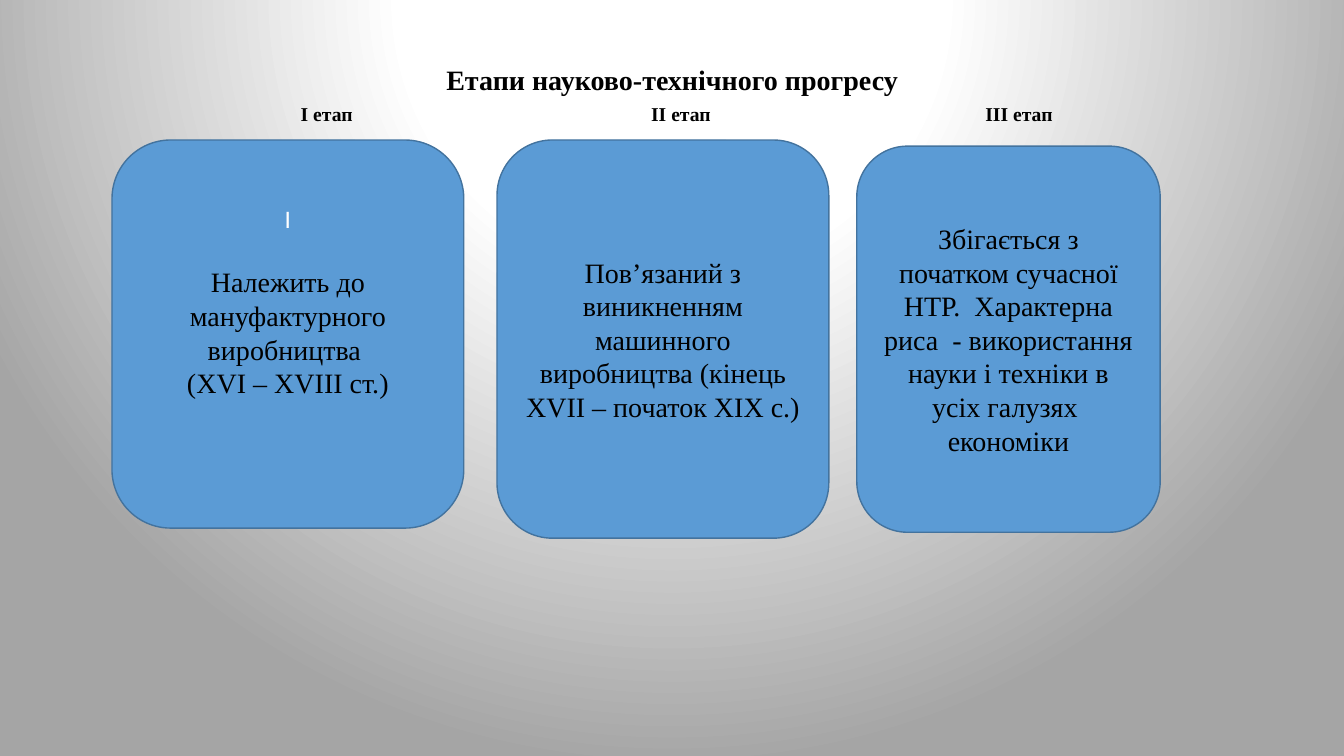
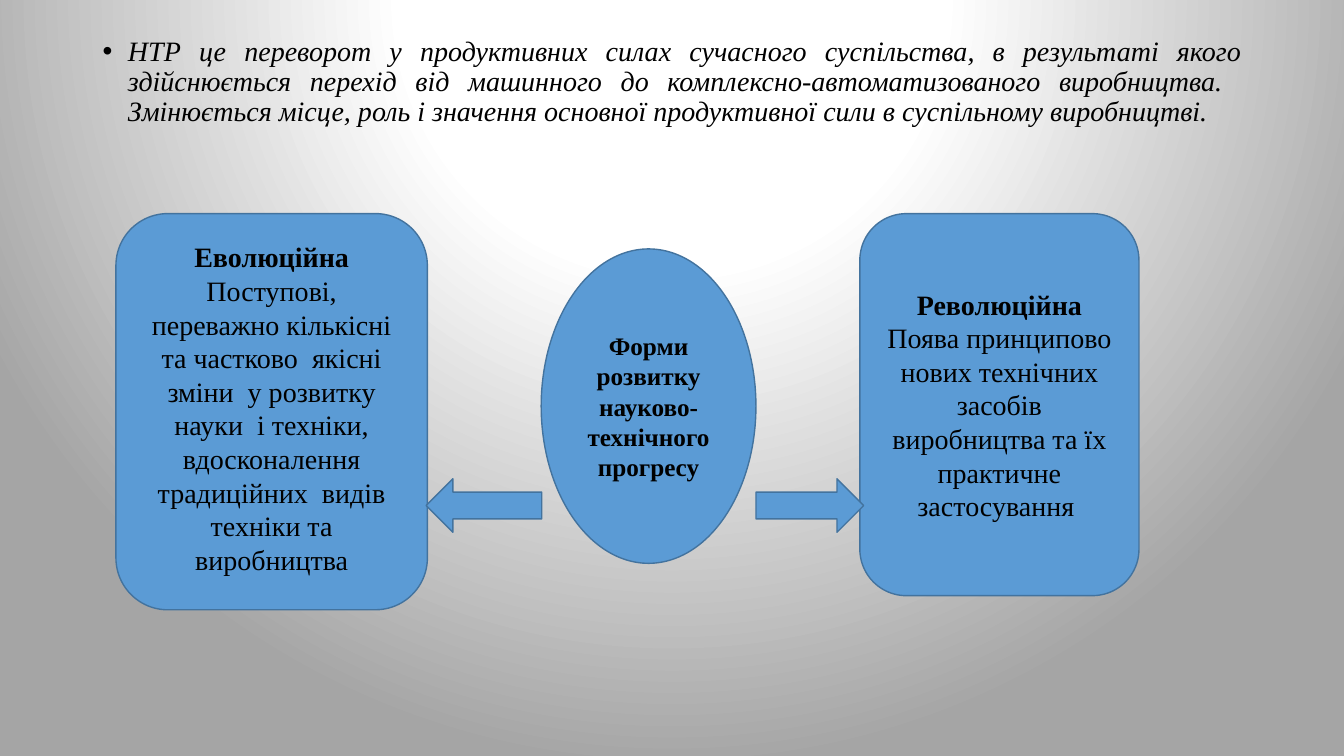
from dataclasses import dataclass

from lxml import etree
from pptx import Presentation
from pptx.dml.color import RGBColor
from pptx.enum import shapes, text
from pptx.oxml import parse_xml
from pptx.oxml.ns import nsdecls, qn
from pptx.util import Pt

BLACK = RGBColor(0x00, 0x00, 0x00)
WHITE = RGBColor(0xFF, 0xFF, 0xFF)
GREY = RGBColor(0xA5, 0xA5, 0xA5)
BLUE = RGBColor(0x5B, 0x9B, 0xD5)
OUTLINE = RGBColor(0x43, 0x73, 0x9E)
FONT = "Times New Roman"
ROUND = shapes.MSO_SHAPE.ROUNDED_RECTANGLE
MARGIN, CONTENT_W = 66.2, 828


@dataclass(frozen=True)
class Line:
    text: str
    size: float = 20
    bold: bool = False
    italic: bool = False
    font: str = FONT
    color: RGBColor = BLACK
    before: float = 0


@dataclass(frozen=True)
class Block:
    kind: shapes.MSO_SHAPE
    x: float
    y: float
    w: float
    h: float
    lines: tuple[Line, ...] = ()
    bottom: float = 3.6  # lower text inset


def write(tf, lines: tuple[Line, ...], align=text.PP_ALIGN.CENTER) -> None:
    """Fill a text frame, one paragraph per line."""
    tf.text = "\n".join(line.text for line in lines)
    tf.word_wrap = True
    tf.auto_size = text.MSO_AUTO_SIZE.NONE
    for p, line in zip(tf.paragraphs, lines):
        p.alignment = align
        p.space_before = Pt(line.before)
        for r in p.runs:
            f = r.font
            f.name, f.size = line.font, Pt(line.size)
            f.bold, f.italic = line.bold, line.italic
            f.color.rgb = line.color


def place(sp, x: float, y: float, w: float, h: float) -> None:
    sp.left, sp.top, sp.width, sp.height = Pt(x), Pt(y), Pt(w), Pt(h)


def draw(s, block: Block) -> None:
    sp = s.shapes.add_shape(block.kind, Pt(block.x), Pt(block.y), Pt(block.w), Pt(block.h))
    sp.shadow.inherit = False
    sp.fill.solid()
    sp.fill.fore_color.rgb = BLUE
    sp.line.color.rgb = OUTLINE
    sp.line.width = Pt(1)
    if block.lines:
        tf = sp.text_frame
        tf.vertical_anchor = text.MSO_ANCHOR.MIDDLE
        tf.margin_bottom = Pt(block.bottom)
        write(tf, block.lines)


def set_background(master) -> None:
    """Radial gradient shared by all slides."""
    c_sld = master.element.find(qn("p:cSld"))
    for old in c_sld.findall(qn("p:bg")):
        c_sld.remove(old)
    stops = "".join(
        f'<a:gs pos="{pos * 1000}"><a:srgbClr val="{color}"/></a:gs>'
        for pos, color in ((0, WHITE), (35, WHITE), (100, GREY))
    )
    c_sld.insert(0, parse_xml(
        f'<p:bg {nsdecls("p", "a")}><p:bgPr><a:gradFill rotWithShape="1">'
        f'<a:gsLst>{stops}</a:gsLst><a:path path="circle">'
        '<a:fillToRect l="50000" t="-80000" r="50000" b="180000"/></a:path>'
        '</a:gradFill><a:effectLst/></p:bgPr></p:bg>'
    ))


def add_center_tabs(p, stops: tuple[float, ...]) -> None:
    tabs = etree.SubElement(p._p.get_or_add_pPr(), qn("a:tabLst"))
    for stop in stops:
        etree.SubElement(tabs, qn("a:tab"), pos=str(Pt(stop)), algn="ctr")


def stages_slide(prs) -> None:
    s = prs.slides.add_slide(prs.slide_layouts[5])

    # Title with the stage names on tab stops
    title = s.shapes.title
    place(title, MARGIN, 28.8, CONTENT_W, 80)
    tf = title.text_frame
    write(tf, (
        Line("Етапи науково-технічного прогресу", bold=True),
        Line("\tІ етап\tІІ етап\tІІІ етап", 14, bold=True, before=6),
    ))
    tf.vertical_anchor = text.MSO_ANCHOR.MIDDLE
    for p in tf.paragraphs:
        p.line_spacing = 0.9
    stages = tf.paragraphs[1]
    stages.alignment = text.PP_ALIGN.LEFT
    add_center_tabs(stages, (160, 413, 654.5))

    # Stage cards
    for block in (
        Block(ROUND, 80, 100, 251.3, 277.2, (
            Line("І", 18, font="Calibri", color=WHITE),
            Line("Належить до мануфактурного виробництва ", before=22),
            Line("(ХVI – XVIII ст.)"),
        ), bottom=50),
        Block(ROUND, 355, 100, 237, 284.4, (
            Line("Пов’язаний з виникненням машинного виробництва "
                 "(кінець XVII – початок XIX с.)"),
        )),
        Block(ROUND, 612, 104.4, 216.7, 275.8, (
            Line("Збігається з початком сучасної НТР.  Характерна риса  - "
                 "використання науки і техніки в усіх галузях  економіки"),
        )),
    ):
        draw(s, block)


def forms_slide(prs) -> None:
    s = prs.slides.add_slide(prs.slide_layouts[1])
    title = s.shapes.title.element
    title.getparent().remove(title)

    # Definition
    body = s.placeholders[1]
    place(body, MARGIN, 23, CONTENT_W, 463.7)
    write(body.text_frame, (
        Line("НТР це переворот у продуктивних силах сучасного суспільства, "
             "в результаті якого здійснюється перехід від машинного до "
             "комплексно-автоматизованого виробництва.  Змінюється місце, роль "
             "і значення основної продуктивної сили в суспільному виробництві.",
             italic=True, before=10),
    ), text.PP_ALIGN.JUSTIFY)
    p = body.text_frame.paragraphs[0]
    p.line_spacing = 0.9
    p_pr = p._p.get_or_add_pPr()
    p_pr.set("marL", str(Pt(18)))
    p_pr.set("indent", str(Pt(-18)))

    # Two forms around the centre, joined by arrows
    for block in (
        Block(ROUND, 82.8, 152.6, 222.5, 283, (
            Line("Еволюційна", bold=True),
            Line("Поступові, переважно кількісні та частково  якісні зміни  "
                 "у розвитку науки  і техніки, вдосконалення традиційних  "
                 "видів техніки та виробництва"),
        ), bottom=9),
        Block(shapes.MSO_SHAPE.OVAL, 386.6, 177.8, 153.4, 224.6, (
            Line("Форми розвитку науково-технічного прогресу", 18, bold=True),
        )),
        Block(ROUND, 614.2, 152.6, 199.4, 272.9, (
            Line("Революційна", bold=True),
            Line("Поява принципово нових технічних засобів виробництва "
                 "та їх практичне застосування "),
        )),
        Block(shapes.MSO_SHAPE.RIGHT_ARROW, 540, 342, 77, 38.2),
        Block(shapes.MSO_SHAPE.LEFT_ARROW, 304.4, 342, 82.6, 38.2),
    ):
        draw(s, block)


def main() -> None:
    prs = Presentation()
    prs.slide_width, prs.slide_height = Pt(960), Pt(540)
    set_background(prs.slide_master)
    stages_slide(prs)
    forms_slide(prs)
    prs.save("out.pptx")


if __name__ == "__main__":
    main()
